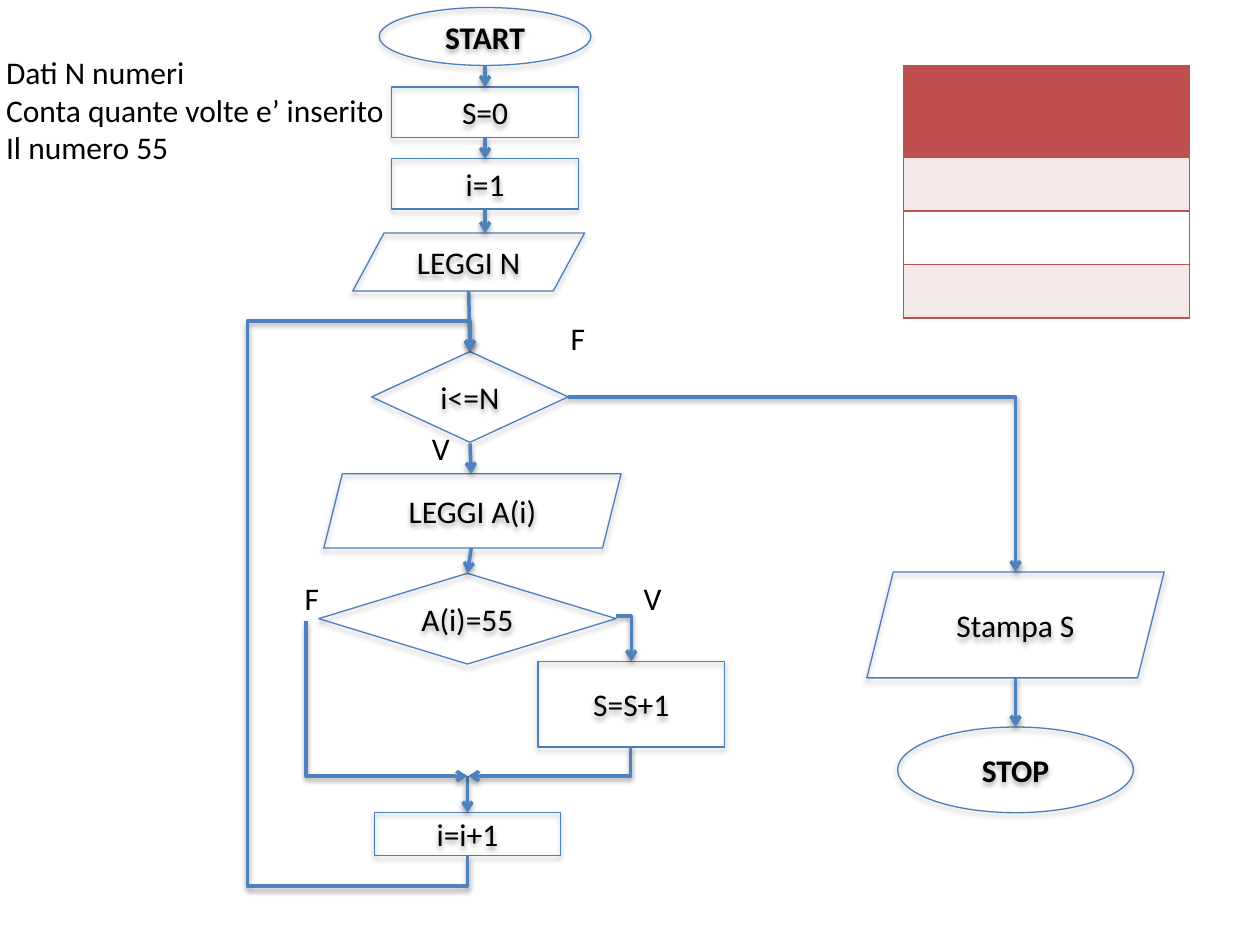
from lxml import etree
from pptx import Presentation
from pptx import util as u
from pptx.dml.color import RGBColor
from pptx.enum import shapes, text
from pptx.oxml.ns import qn

BLACK = RGBColor(0, 0, 0)
WHITE = RGBColor(255, 255, 255)
OUTLINE = RGBColor(0x4B, 0x7E, 0xBC)
FLOW = RGBColor(0x4F, 0x81, 0xBD)
RED = RGBColor(0xC0, 0x50, 0x4D)
BAND = RGBColor(0xF4, 0xE9, 0xE9)

COLUMNS, ROWS = 100, 75
KIND = shapes.MSO_SHAPE


def add_xml(parent, tag, **attributes):
    return etree.SubElement(parent, qn(tag), attributes)


class Flowchart:
    font, size = "Calibri", 18

    def __init__(self, deck):
        self.slide = deck.slides.add_slide(deck.slide_layouts[6])
        self.column = deck.slide_width / COLUMNS
        self.row = deck.slide_height / ROWS

    def place(self, *lengths):
        """Turn alternating columns and rows into slide lengths."""
        return [u.Emu(round(length * (self.row if i % 2 else self.column)))
                for i, length in enumerate(lengths)]

    def letter(self, frame, words, bold=False, align=None):
        frame.text = words
        for para in frame.paragraphs:
            para.alignment = align
            for span in para.runs:
                span.font.name, span.font.size = self.font, u.Pt(self.size)
                span.font.bold, span.font.color.rgb = bold, BLACK

    def shade(self, item, distance, opacity):
        effects = add_xml(item._element.spPr, "a:effectLst")
        shadow = add_xml(effects, "a:outerShdw", blurRad=str(u.Pt(3.1)),
                         dist=str(u.Pt(distance)), dir="5400000", rotWithShape="0")
        color = add_xml(shadow, "a:srgbClr", val=str(BLACK))
        add_xml(color, "a:alpha", val=str(opacity * 1000))

    def node(self, kind, words, center, top, width, height, bold=False, slant=None):
        shape = self.slide.shapes.add_shape(
            kind, *self.place(center - width / 2, top, width, height))
        if slant:
            shape.adjustments[0] = slant
        shape.fill.background()
        shape.line.color.rgb, shape.line.width = OUTLINE, u.Pt(0.75)
        self.shade(shape, 1.8, 35)
        shape.text_frame.word_wrap = True
        shape.text_frame.vertical_anchor = text.MSO_ANCHOR.MIDDLE
        self.letter(shape.text_frame, words, bold, text.PP_ALIGN.CENTER)

    def label(self, words, left, top, width, height=4):
        box = self.slide.shapes.add_textbox(*self.place(left, top, width, height))
        box.text_frame.word_wrap = False
        box.text_frame.auto_size = text.MSO_AUTO_SIZE.SHAPE_TO_FIT_TEXT
        self.letter(box.text_frame, words)

    def arrow(self, *ends, kind=shapes.MSO_CONNECTOR.STRAIGHT):
        line = self.slide.shapes.add_connector(kind, *self.place(*ends))
        line.line.color.rgb, line.line.width = FLOW, u.Pt(2)
        add_xml(line._element.spPr.find(qn("a:ln")), "a:tailEnd", type="arrow")
        self.shade(line, 1.6, 38)
        return line

    def elbow(self, bends, left, top, width, height, turned=False, flipped=False,
              adjust=()):
        """Bent arrow; a turned one leaves its start downwards."""
        line = self.arrow(left, top, left + width, top + height,
                          kind=shapes.MSO_CONNECTOR.ELBOW)
        frame = line._element.spPr.find(qn("a:xfrm"))
        if turned:
            frame.set("rot", "5400000")
        if flipped:
            frame.set("flipH", "1")
            frame.set("flipV", "1")
        geometry = line._element.spPr.find(qn("a:prstGeom"))
        geometry.set("prst", f"bentConnector{bends + 1}")
        guides = geometry.find(qn("a:avLst"))
        for number, share in enumerate(adjust, 1):
            add_xml(guides, "a:gd", name=f"adj{number}",
                    fmla=f"val {round(share * 100000)}")

    def border(self, cell, side, visible):
        line = add_xml(cell._tc.get_or_add_tcPr(), f"a:ln{side}", w=str(u.Pt(1)))
        if visible:
            fill = add_xml(line, "a:solidFill")
            add_xml(fill, "a:srgbClr", val=str(RED))
        else:
            add_xml(line, "a:noFill")

    def table(self, left, top, width, heights, fills, count):
        grid = self.slide.shapes.add_table(
            len(heights), count, *self.place(left, top, width, sum(heights))).table
        for r, (height, fill) in enumerate(zip(heights, fills)):
            grid.rows[r].height = self.place(0, height)[1]
            for c in range(count):
                cell = grid.cell(r, c)
                edges = {"L": c == 0, "R": c == count - 1, "T": True, "B": True}
                for side, visible in edges.items():
                    self.border(cell, side, visible)
                cell.fill.solid()
                cell.fill.fore_color.rgb = fill


def main():
    deck = Presentation()
    deck.slide_width, deck.slide_height = u.Inches(10), u.Inches(7.5)
    chart = Flowchart(deck)

    # Start, set-up and input
    chart.node(KIND.OVAL, "START", 38.5, 0.6, 16.8, 4.6, bold=True)
    for words, top in (("S=0", 6.9), ("i=1", 12.6)):
        chart.node(KIND.RECTANGLE, words, 38.5, top, 14.8, 4)
    chart.node(KIND.PARALLELOGRAM, "LEGGI N", 37.2, 18.5, 18.4, 4.6, slant=0.54)

    # Loop
    chart.node(KIND.DIAMOND, "i<=N", 37.3, 27.9, 15.6, 7.2)
    chart.node(KIND.PARALLELOGRAM, "LEGGI A(i)", 37.5, 37.6, 23.6, 5.9)
    chart.node(KIND.DIAMOND, "A(i)=55", 37.1, 45.5, 23.6, 7.2)
    chart.node(KIND.RECTANGLE, "S=S+1", 50.1, 52.5, 14.8, 6.8)
    chart.node(KIND.RECTANGLE, "i=i+1", 37.1, 64.5, 14.8, 3.4)

    # Output and stop
    chart.node(KIND.PARALLELOGRAM, "Stampa S", 80.6, 45.4, 23.6, 8.4)
    chart.node(KIND.OVAL, "STOP", 80.6, 57.7, 18.7, 6.8, bold=True)

    # Straight arrows
    for ends in ((38.5, 5.2, 38.5, 6.9), (38.5, 10.9, 38.5, 12.6),
                 (38.5, 16.6, 38.5, 18.5), (37.2, 23.1, 37.3, 27.9),
                 (37.3, 35.2, 37.4, 37.6), (37.4, 43.5, 37.1, 45.5),
                 (37.1, 61.6, 37.1, 64.5), (80.6, 53.8, 80.6, 57.7)):
        chart.arrow(*ends)

    # Branches, their meeting point and the way back to the loop test
    chart.elbow(1, 48.9, 48.9, 1.2, 3.6)
    chart.elbow(1, 45.1, 31.5, 35.5, 13.9)
    chart.elbow(2, 24.3, 49.3, 12.8, 12.3, adjust=[0])
    chart.elbow(1, 42.45, 54, 2.3, 12.9, turned=True)
    drift, rise, margin = 0.2, 40, 2.45
    chart.elbow(4, 17.2, 47.8, rise, drift, turned=True, flipped=True,
                adjust=[-margin / rise, (19.7 - 37.1) / drift, 1 + margin / rise])

    # Labels
    for words, left, top in (("F", 23.2, 45.5), ("F", 44.3, 24.8),
                             ("V", 50.1, 45.5), ("V", 33.3, 33.6)):
        chart.label(words, left, top, 3.2 if words == "F" else 3.5)
    chart.label("Dati N numeri\nConta quante volte e’ inserito\nIl numero 55",
                -0.5, 3.7, 32.3, 10.1)

    # Empty trace table
    chart.table(71.7, 5.2, 22.7, [7.3] + [4.25] * 3, [RED, BAND, WHITE, BAND], 3)

    deck.save("out.pptx")


if __name__ == "__main__":
    main()
